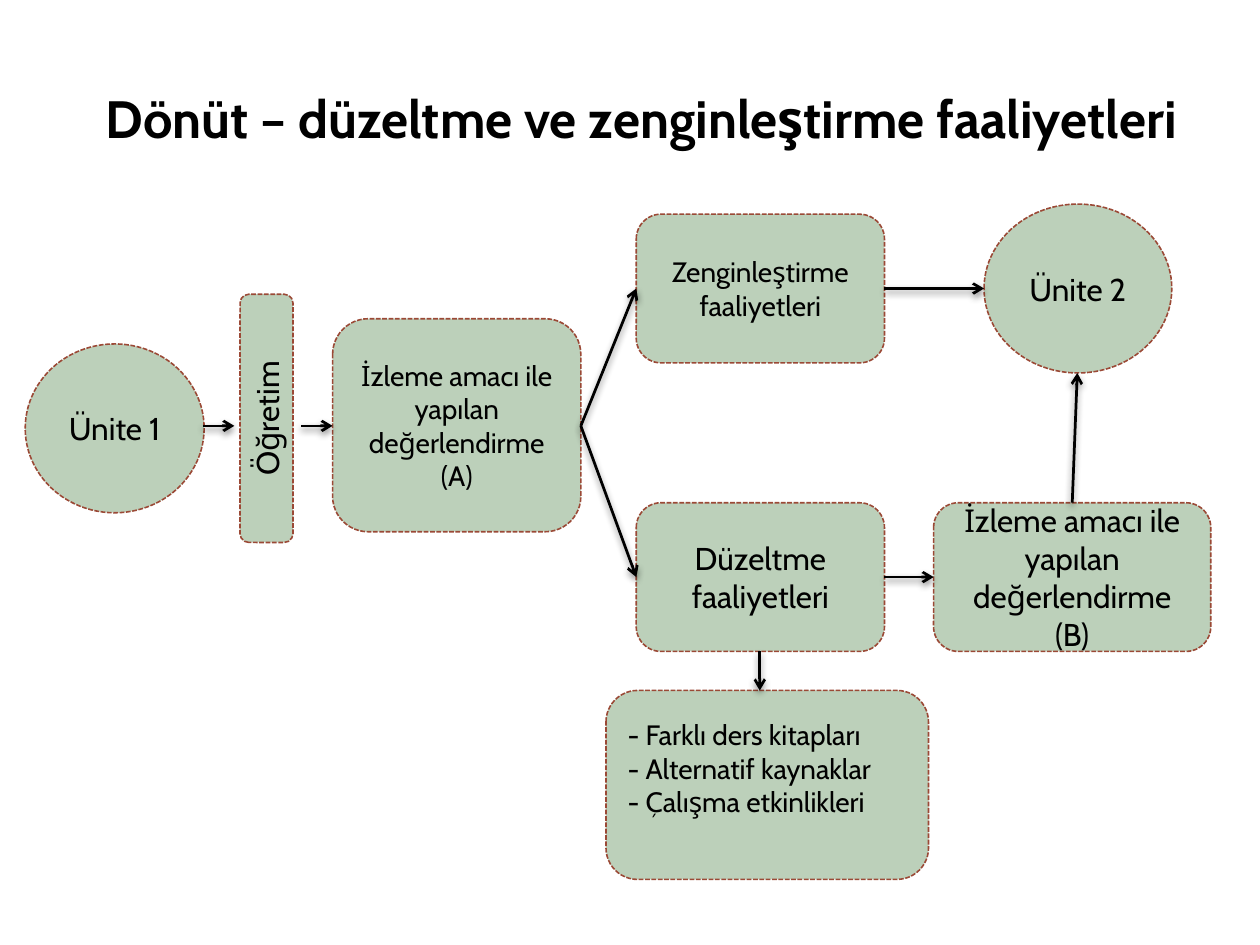
from lxml import etree
from pptx import Presentation
from pptx import util as u
from pptx.dml.color import RGBColor
from pptx.enum import dml, shapes, text
from pptx.oxml import ns

COLORS = {"fill": "BCD0BA", "border": "9B4936", "ink": "000000"}
FONT = "Cabin"
ROUND = shapes.MSO_SHAPE.ROUNDED_RECTANGLE
OVAL = shapes.MSO_SHAPE.OVAL
CENTER, LEFT = text.PP_ALIGN.CENTER, text.PP_ALIGN.LEFT

STEP_W, STEP_H = 1.97, 1.18
FLOW_Y, TOP_Y, LOW_Y = 3.38, 2.29, 4.58
BRANCH_X, BRANCH_END = 5.05, 7.02
LOW_TOP, LOW_BOTTOM = 3.99, 5.17

STEPS = [
    (OVAL, (0.2, 2.73, 1.42, 1.34), "Ünite 1", 18),
    (ROUND, (2.64, 2.53, STEP_W, 1.69), "İzleme amacı ile yapılan değerlendirme (A)", 16),
    (ROUND, (BRANCH_X, 1.7, STEP_W, STEP_H), "Zenginleştirme faaliyetleri", 16),
    (ROUND, (BRANCH_X, LOW_TOP, STEP_W, STEP_H), "Düzeltme faaliyetleri", 18),
    (ROUND, (7.41, LOW_TOP, 2.2, STEP_H), "İzleme amacı ile yapılan değerlendirme (B)", 18),
    (OVAL, (7.81, 1.62, 1.49, 1.34), "Ünite 2", 18),
]
ARROWS = [
    ((1.61, FLOW_Y), (1.86, FLOW_Y)),
    ((2.39, FLOW_Y), (2.64, FLOW_Y)),
    ((4.61, FLOW_Y), (BRANCH_X, TOP_Y)),
    ((4.61, FLOW_Y), (BRANCH_X, LOW_Y)),
    ((BRANCH_END, TOP_Y), (7.81, TOP_Y)),
    ((BRANCH_END, LOW_Y), (7.41, LOW_Y)),
    ((8.51, LOW_TOP), (8.55, 2.96)),
    ((6.03, LOW_BOTTOM), (6.03, 5.48)),
]
RESOURCES = ["- Farklı ders kitapları", "- Alternatif kaynaklar", "- Çalışma etkinlikleri"]


def color(name):
    """Return the named palette colour."""
    return RGBColor.from_string(COLORS[name])


def write(frame, lines, size, align=CENTER, anchor=text.MSO_ANCHOR.MIDDLE, bold=False):
    """Fill a text frame with one paragraph per line."""
    frame.word_wrap = True
    frame.vertical_anchor = anchor
    for index, line in enumerate(lines):
        paragraph = frame.paragraphs[0] if index == 0 else frame.add_paragraph()
        paragraph.alignment = align
        run = paragraph.add_run()
        run.text = line
        run.font.name = FONT
        run.font.size = u.Pt(size)
        run.font.bold = bold
        run.font.color.rgb = color("ink")


def add_step(slide, kind, box, lines, size, align=CENTER):
    """Add a filled shape with a dashed border and text."""
    step = slide.shapes.add_shape(kind, *map(u.Inches, box))
    step.shadow.inherit = False
    step.fill.solid()
    step.fill.fore_color.rgb = color("fill")
    step.line.color.rgb = color("border")
    step.line.width = u.Pt(0.9)
    step.line.dash_style = dml.MSO_LINE.SQUARE_DOT
    write(step.text_frame, lines, size, align)
    return step


def add_arrow(slide, start, end):
    """Add a straight arrow with a soft shadow below it."""
    arrow = slide.shapes.add_connector(
        shapes.MSO_CONNECTOR.STRAIGHT, *map(u.Inches, start + end))
    arrow.line.color.rgb = color("ink")
    arrow.line.width = u.Pt(1.57)
    etree.SubElement(arrow.line._get_or_add_ln(), ns.qn("a:tailEnd"), type="arrow")
    effects = etree.SubElement(arrow._element.spPr, ns.qn("a:effectLst"))
    shadow = etree.SubElement(
        effects, ns.qn("a:outerShdw"), blurRad=str(u.Pt(4)), dist=str(u.Pt(2)),
        dir="5400000", rotWithShape="0")
    tint = etree.SubElement(shadow, ns.qn("a:srgbClr"), val=COLORS["ink"])
    etree.SubElement(tint, ns.qn("a:alpha"), val="45000")


def add_title(slide, title):
    """Add the bold heading."""
    heading = slide.shapes.add_textbox(*map(u.Inches, (0.59, 0.62, 9, 0.61)))
    write(heading.text_frame, [title], 30, anchor=text.MSO_ANCHOR.BOTTOM, bold=True)


def main():
    """Build the feedback and enrichment flow slide."""
    deck = Presentation()
    deck.slide_width, deck.slide_height = u.Inches(10), u.Inches(7.5)
    slide = deck.slides.add_slide(deck.slide_layouts[6])
    add_title(slide, "Dönüt – düzeltme ve zenginleştirme faaliyetleri")
    for kind, box, label, size in STEPS:
        add_step(slide, kind, box, [label], size)
    teaching = add_step(slide, ROUND, (1.13, 3.11, STEP_W, 0.42), ["Öğretim"], 18)
    teaching.rotation = 270
    resources = add_step(slide, ROUND, (4.81, 5.48, 2.56, 1.5), RESOURCES, 16, LEFT)
    resources.text_frame.margin_bottom = u.Inches(0.32)
    for start, end in ARROWS:
        add_arrow(slide, start, end)
    deck.save("out.pptx")


if __name__ == "__main__":
    main()
